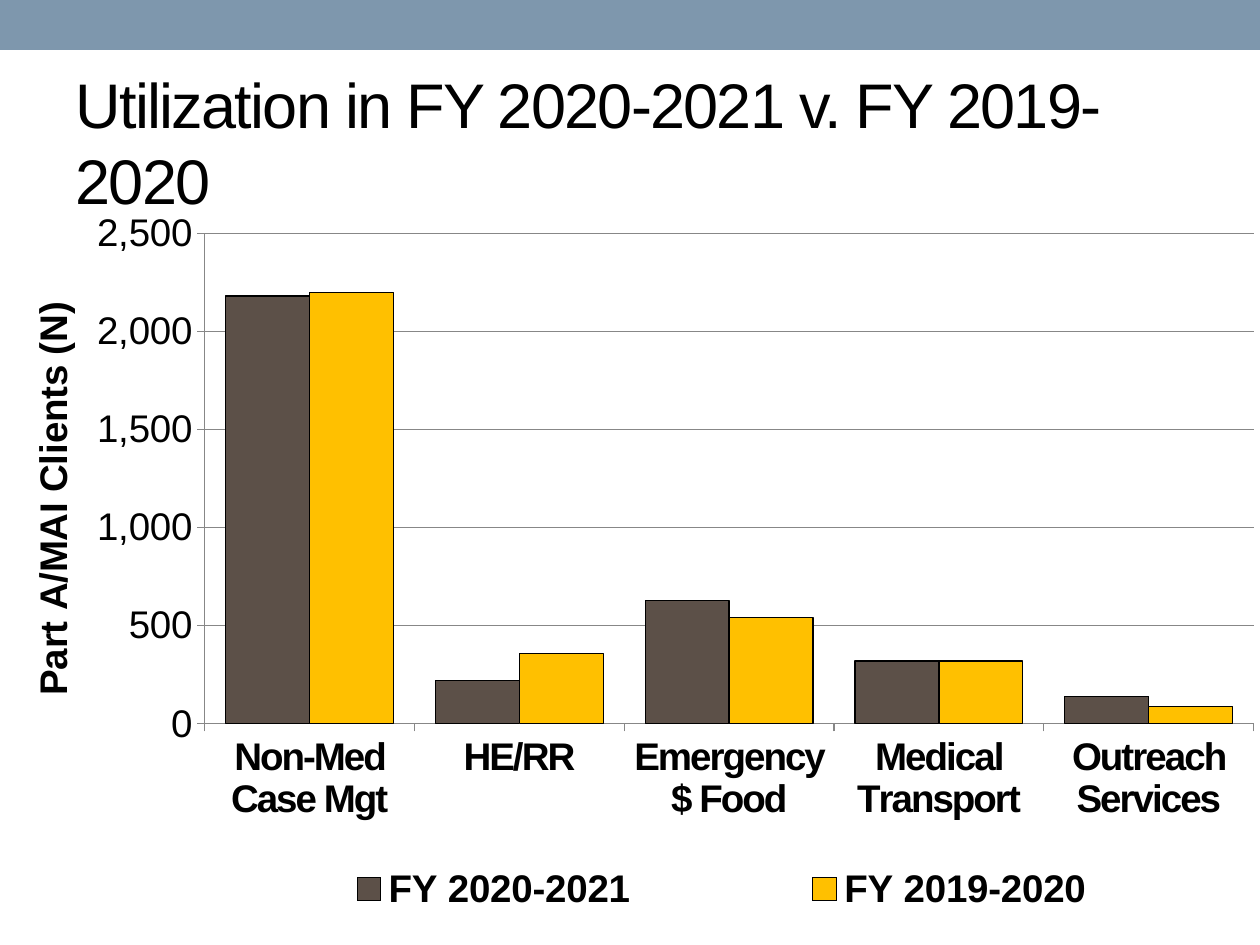
"""Build a slide comparing service utilization across two fiscal years."""
from lxml.etree import SubElement
from pptx import Presentation
from pptx.chart.data import CategoryChartData
from pptx.dml.color import RGBColor
from pptx.enum.chart import XL_CHART_TYPE, XL_LEGEND_POSITION, XL_TICK_MARK
from pptx.enum.shapes import MSO_SHAPE
from pptx.enum.text import MSO_ANCHOR, MSO_AUTO_SIZE, PP_ALIGN
from pptx.oxml.ns import qn
from pptx.util import Pt

TITLE = "Utilization in FY 2020-2021 v. FY 2019-2020"
AXIS_TITLE = "Part A/MAI Clients (N)"
CATEGORIES = ["Non-Med Case Mgt", "HE/RR", "Emergency $ Food", "Medical Transport", "Outreach Services"]
SERIES = [
    ("FY 2020-2021", (2180, 220, 630, 320, 140), "5C5048"),
    ("FY 2019-2020", (2200, 360, 540, 320, 90), "FFC000"),
]
SLIDE_SIZE = (1260, 945)
BAND_BOX = (0, 0, 1260, 50)
TITLE_BOX = (63, 73, 1134, 136)
CHART_BOX = (-4, 210, 1273, 711)
PLOT_LAYOUT = {"layoutTarget": "inner", "xMode": "edge", "yMode": "edge",
               "x": 0.164, "y": 0.033, "w": 0.824, "h": 0.69}
LEGEND_LAYOUT = {"xMode": "edge", "yMode": "edge", "x": 0.15, "y": 0.91, "w": 0.84, "h": 0.09}
AXIS_TITLE_LAYOUT = {"xMode": "edge", "yMode": "edge", "x": 0.02, "y": 0.12}
FONT, BLACK, GRAY, BAND = "Arial", "000000", "878787", "7E97AD"


def px(*lengths):
    return [round(length * 914400 / 126) for length in lengths]


def color(value):
    return RGBColor.from_string(value)


def style_font(font, size, bold=False):
    font.name, font.size, font.bold = FONT, Pt(size), bold
    font.color.rgb = color(BLACK)


def set_layout(parent, values, position):
    for old in parent.findall(qn("c:layout")):
        parent.remove(old)
    layout = SubElement(parent, qn("c:layout"))
    manual = SubElement(layout, qn("c:manualLayout"))
    for name, value in values.items():
        SubElement(manual, qn(f"c:{name}")).set("val", str(value))
    parent.insert(position, layout)


def add_band(slide):
    band = slide.shapes.add_shape(MSO_SHAPE.RECTANGLE, *px(*BAND_BOX))
    band.shadow.inherit = False
    band.fill.solid()
    band.fill.fore_color.rgb = color(BAND)
    band.line.fill.background()


def add_title(slide):
    title = slide.shapes.title
    title.left, title.top, title.width, title.height = px(*TITLE_BOX)
    frame = title.text_frame
    frame.word_wrap, frame.auto_size = True, MSO_AUTO_SIZE.NONE
    frame.vertical_anchor = MSO_ANCHOR.MIDDLE
    paragraph = frame.paragraphs[0]
    paragraph.alignment = PP_ALIGN.LEFT
    run = paragraph.add_run()
    run.text = TITLE
    style_font(run.font, 36)
    run.font._element.set("spc", "-100")


def style_axes(chart):
    category_axis, value_axis = chart.category_axis, chart.value_axis
    for axis, bold in ((category_axis, True), (value_axis, False)):
        style_font(axis.tick_labels.font, 22, bold)
        axis.major_tick_mark = XL_TICK_MARK.OUTSIDE
        axis.format.line.color.rgb = color(GRAY)
    category_axis.tick_labels.font._element.set("spc", "-100")
    value_axis.minimum_scale, value_axis.maximum_scale, value_axis.major_unit = 0, 2500, 500
    value_axis.tick_labels.number_format = "#,##0"
    value_axis.tick_labels.number_format_is_linked = False
    value_axis.has_major_gridlines = True
    value_axis.major_gridlines.format.line.color.rgb = color(GRAY)
    run = value_axis.axis_title.text_frame.paragraphs[0].add_run()
    run.text = AXIS_TITLE
    style_font(run.font, 22, True)
    set_layout(value_axis.axis_title._element, AXIS_TITLE_LAYOUT, 1)


def add_chart(slide):
    data = CategoryChartData(number_format="General")
    data.categories = CATEGORIES
    for name, values, _ in SERIES:
        data.add_series(name, values)
    chart = slide.shapes.add_chart(XL_CHART_TYPE.COLUMN_CLUSTERED, *px(*CHART_BOX), data).chart
    chart.has_title = False
    style_font(chart.font, 22)
    plot = chart.plots[0]
    plot.gap_width, plot.overlap, plot.vary_by_categories = 50, 0, False
    for series, (_, _, fill) in zip(plot.series, SERIES):
        series.format.fill.solid()
        series.format.fill.fore_color.rgb = color(fill)
        series.format.line.color.rgb = color(BLACK)
        series.format.line.width = Pt(0.75)
    style_axes(chart)
    chart.has_legend = True
    legend = chart.legend
    legend.position, legend.include_in_layout = XL_LEGEND_POSITION.BOTTOM, False
    style_font(legend.font, 22, True)
    set_layout(legend._element, LEGEND_LAYOUT, 1)
    set_layout(chart._chartSpace.chart.plotArea, PLOT_LAYOUT, 0)


def main():
    presentation = Presentation()
    presentation.slide_width, presentation.slide_height = px(*SLIDE_SIZE)
    slide = presentation.slides.add_slide(presentation.slide_layouts[5])
    add_band(slide)
    add_title(slide)
    add_chart(slide)
    presentation.save("out.pptx")


if __name__ == "__main__":
    main()
